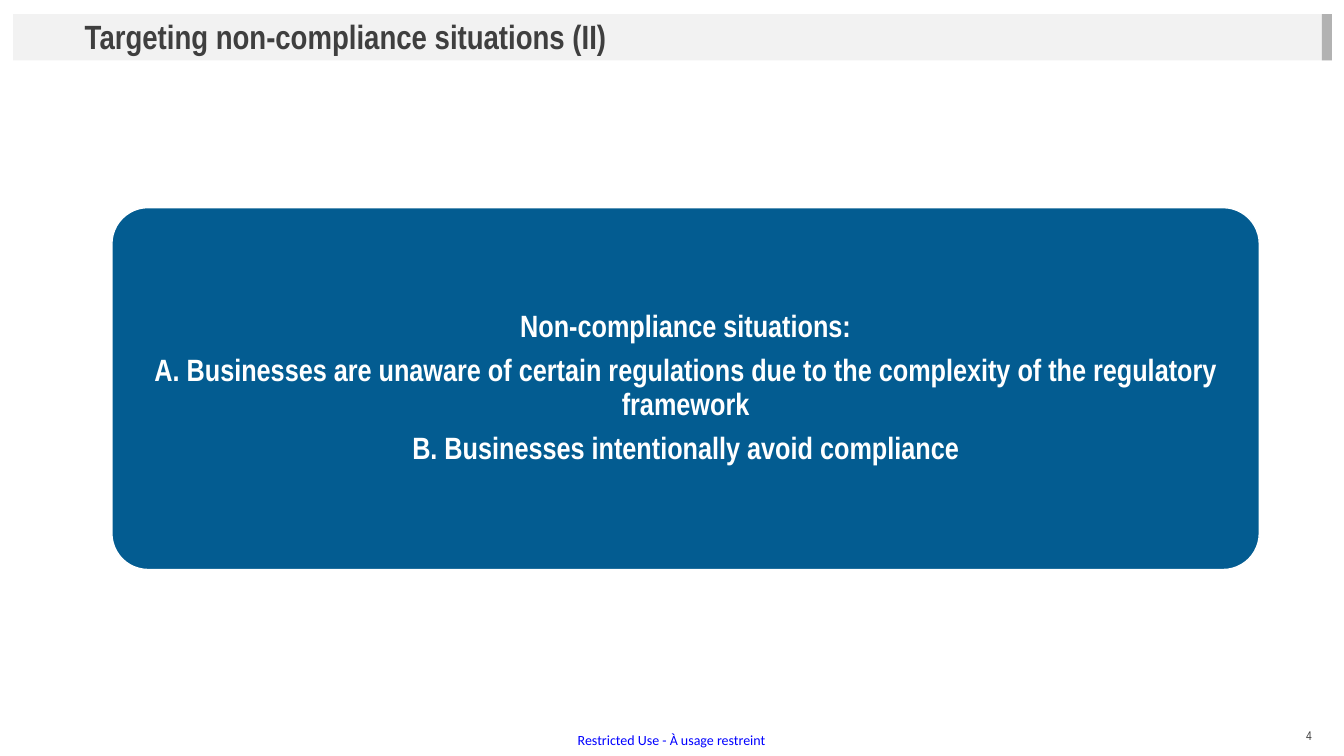
from dataclasses import dataclass

from pptx import Presentation
from pptx.dml.color import RGBColor
from pptx.enum.shapes import MSO_SHAPE as Shape
from pptx.enum.text import MSO_ANCHOR as Anchor, MSO_AUTO_SIZE as Fit, PP_ALIGN as Align
from pptx.util import Inches, Pt

NARROW = "Arial Narrow"
DARK = "3F3F3F"
WHITE = "FFFFFF"


@dataclass(frozen=True)
class Box:
    left: float
    top: float
    width: float
    height: float


@dataclass(frozen=True)
class Panel:
    box: Box
    fill: str
    kind: Shape = Shape.RECTANGLE
    line: str = ""


@dataclass(frozen=True)
class Style:
    size: float
    color: str
    font: str = NARROW
    bold: bool = False
    align: Align = Align.LEFT
    lead: float = 1.0
    after: float = 0
    pad: tuple[float, float] = (0.1, 0.05)


BARS = [
    Panel(Box(0.13, 0.14, 13.08, 0.46), "F2F2F2"),
    Panel(Box(13.11, 0.14, 0.1, 0.46), "B2B2B2"),
]
CARD = Panel(Box(1.11, 2.06, 11.38, 3.59), "035C91", Shape.ROUNDED_RECTANGLE, WHITE)
CASES = [
    "Non-compliance situations:",
    "A. Businesses are unaware of certain regulations due to the complexity of the regulatory framework",
    "B. Businesses intentionally avoid compliance",
]
HEAD = Style(24, DARK, bold=True, lead=0.9)
BODY = Style(22, WHITE, bold=True, align=Align.CENTER, lead=0.9, after=7.7, pad=(0.07, 0.07))
NOTE = Style(10, "0000FF", font="Calibri", pad=(0, 0))
PAGE = Style(9, DARK, align=Align.RIGHT)


def rgb(code: str) -> RGBColor:
    return RGBColor.from_string(code)


def place(shape, box: Box) -> None:
    shape.left, shape.top = Inches(box.left), Inches(box.top)
    shape.width, shape.height = Inches(box.width), Inches(box.height)


def write(shape, lines: list[str], style: Style, wrap: bool = True) -> None:
    frame = shape.text_frame
    frame.word_wrap = wrap
    frame.auto_size = Fit.NONE
    frame.vertical_anchor = Anchor.MIDDLE
    side, edge = style.pad
    frame.margin_left = frame.margin_right = Inches(side)
    frame.margin_top = frame.margin_bottom = Inches(edge)
    for index, line in enumerate(lines):
        para = frame.add_paragraph() if index else frame.paragraphs[0]
        para.alignment = style.align
        para.line_spacing = style.lead
        para.space_before = Pt(0)
        para.space_after = Pt(style.after)
        run = para.add_run()
        run.text = line
        run.font.name = style.font
        run.font.size = Pt(style.size)
        run.font.bold = style.bold
        run.font.color.rgb = rgb(style.color)


def draw(slide, panel: Panel):
    shape = slide.shapes.add_shape(panel.kind, 0, 0, 0, 0)
    place(shape, panel.box)
    shape.shadow.inherit = False
    shape.fill.solid()
    shape.fill.fore_color.rgb = rgb(panel.fill)
    if panel.line:
        shape.line.color.rgb = rgb(panel.line)
        shape.line.width = Pt(1)
    else:
        shape.line.fill.background()
    return shape


def label(slide, box: Box, text: str, style: Style, wrap: bool = True) -> None:
    shape = slide.shapes.add_textbox(0, 0, 0, 0)
    place(shape, box)
    write(shape, [text], style, wrap)


def main() -> None:
    deck = Presentation()
    deck.slide_width, deck.slide_height = Inches(13.33), Inches(7.5)
    slide = deck.slides.add_slide(deck.slide_layouts[5])

    for bar in BARS:
        draw(slide, bar)

    title = slide.shapes.title
    title.element.getparent().append(title.element)
    place(title, Box(0.74, 0.15, 12.37, 0.46))
    write(title, ["Targeting non-compliance situations (II)"], HEAD)

    card = draw(slide, CARD)
    card.adjustments[0] = 0.1
    write(card, CASES, BODY)

    label(slide, Box(5.73, 7.26, 1.91, 0.17), "Restricted Use - À usage restreint", NOTE, False)
    label(slide, Box(10.11, 7.1, 3, 0.4), "4", PAGE)
    deck.save("out.pptx")


if __name__ == "__main__":
    main()
